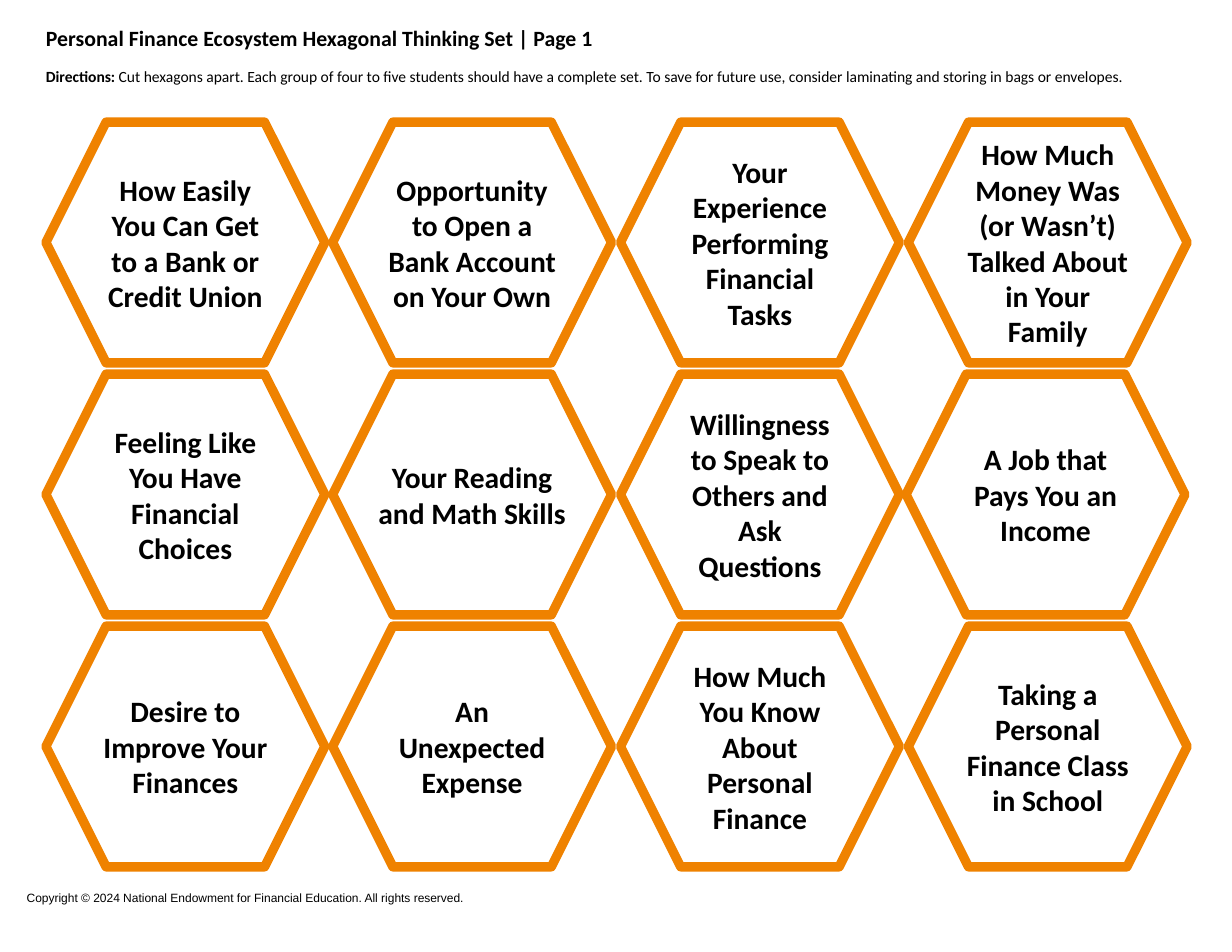
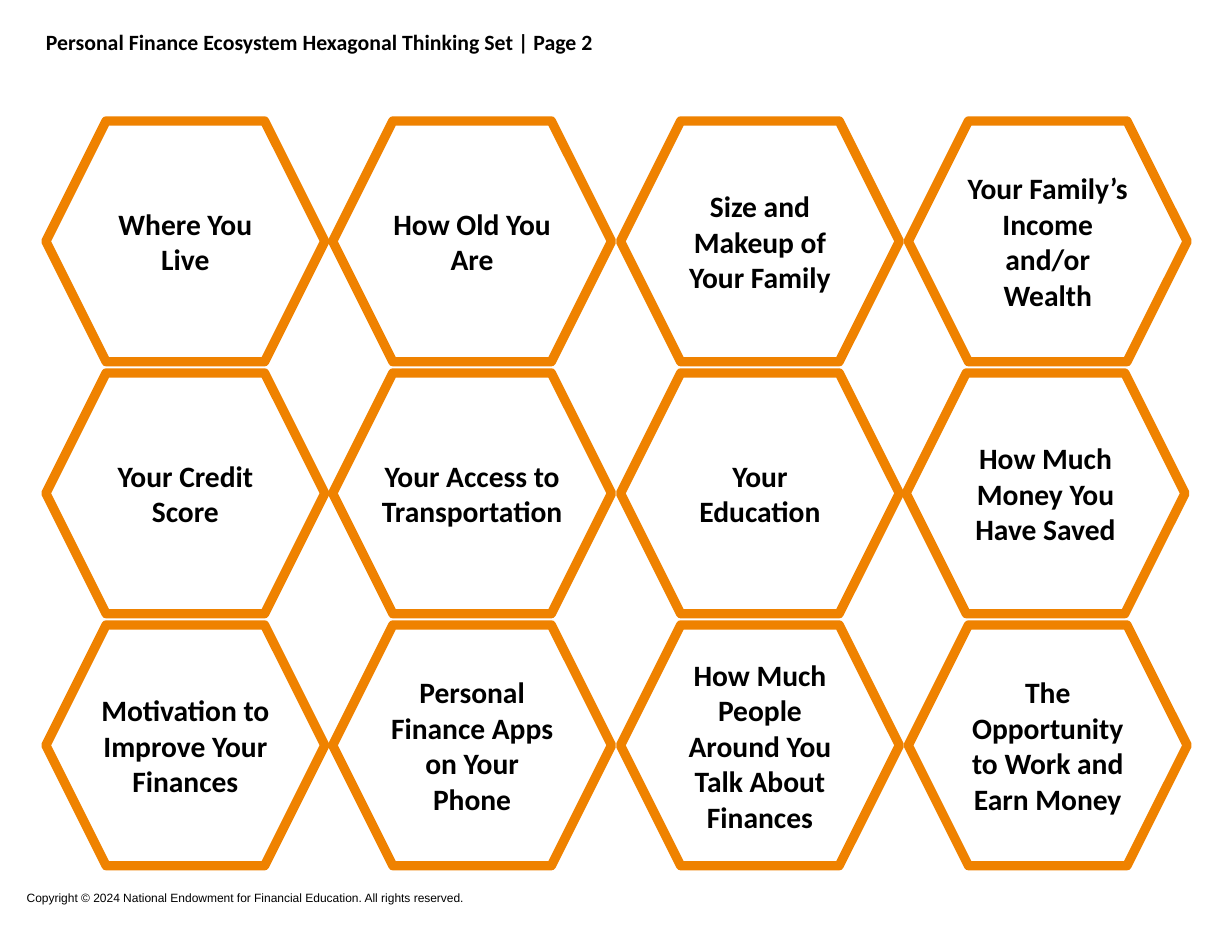
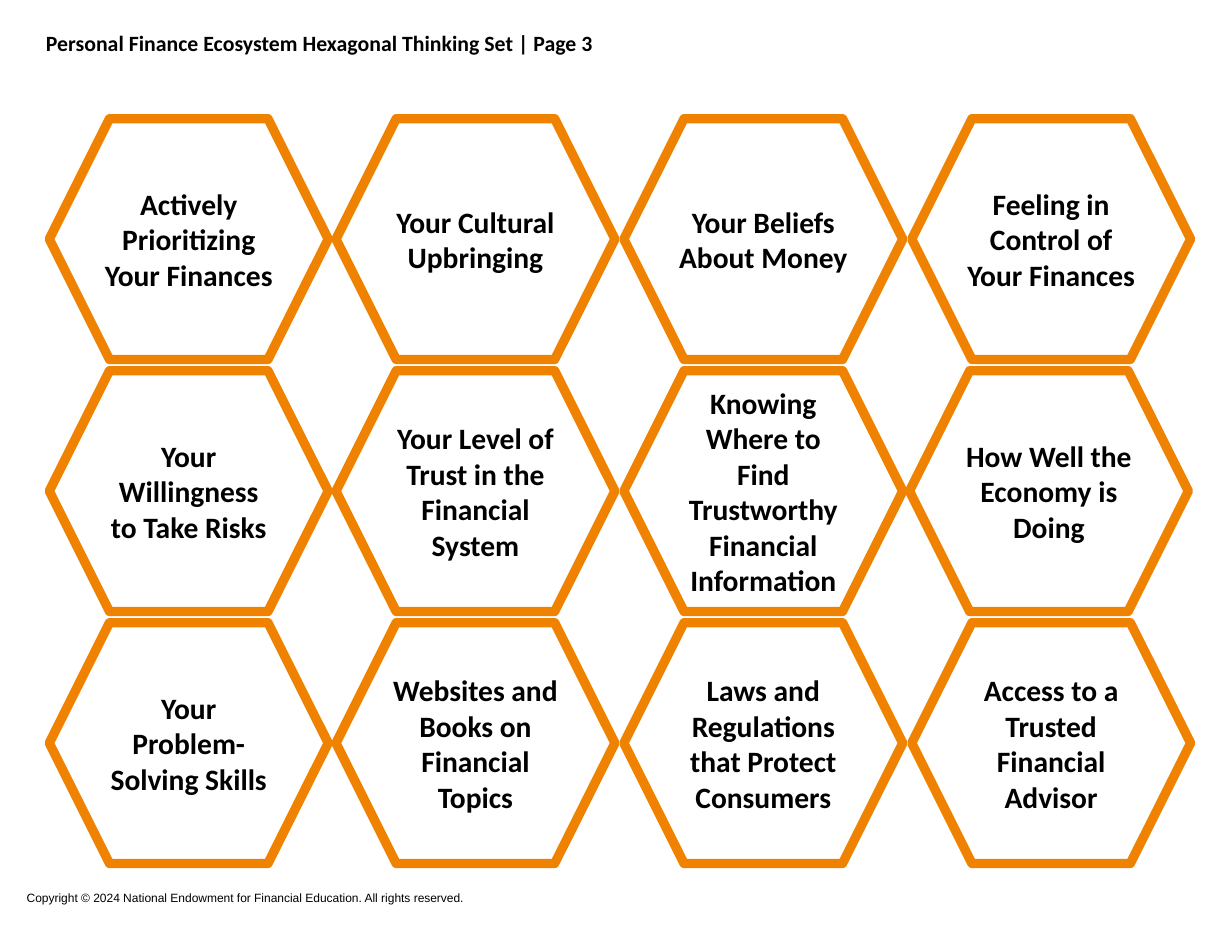
from pptx import Presentation
from pptx.dml.color import RGBColor
from pptx.enum.shapes import MSO_SHAPE
from pptx.enum.text import MSO_ANCHOR, MSO_AUTO_SIZE, PP_ALIGN
from pptx.util import Pt

HEX = MSO_SHAPE.HEXAGON
TOP, MID, LOW = MSO_ANCHOR.TOP, MSO_ANCHOR.MIDDLE, MSO_ANCHOR.BOTTOM
LEFT, MIDST = PP_ALIGN.LEFT, PP_ALIGN.CENTER
FIXED = MSO_AUTO_SIZE.NONE

PX = 9144
INK = {"text": "000000", "edge": "EF8200"}
HEAD = "Personal Finance Ecosystem Hexagonal Thinking Set | Page "
GUIDE = [
    ("Directions: ", True),
    ("Cut hexagons apart. Each group of four to five students should have "
     "a complete set. To save for future use, consider laminating and "
     "storing in bags or envelopes.", False),
]
RIGHTS = ("Copyright © 2024 National Endowment for Financial Education. "
          "All rights reserved.")

PAGES = [
    {"head": (31, 9, 1037, 96), "grid": (41, 109), "guide": GUIDE, "cards": [
        ["How Easily You Can Get to a Bank or Credit Union",
         "Opportunity to Open a Bank Account on Your Own",
         "Your Experience Performing Financial Tasks",
         "How Much Money Was (or Wasn’t) Talked About in Your Family"],
        ["Feeling Like You Have Financial Choices",
         "Your Reading and Math Skills",
         "Willingness to Speak to Others and Ask Questions",
         "A Job that Pays You an Income"],
        ["Desire to Improve Your Finances",
         "An Unexpected Expense",
         "How Much You Know About Personal Finance",
         "Taking a Personal Finance Class in School"]]},
    {"head": (31, 12, 865, 96), "grid": (41, 108), "guide": None, "cards": [
        ["Where You Live",
         "How Old You Are",
         "Size and Makeup of Your Family",
         "Your Family’s Income and/or Wealth"],
        ["Your Credit Score",
         "Your Access to Transportation",
         "Your Education",
         "How Much Money You Have Saved"],
        ["Motivation to Improve Your Finances",
         "Personal Finance Apps on Your Phone",
         "How Much People Around You Talk About Finances",
         "The Opportunity to Work and Earn Money"]]},
    {"head": (31, 13, 865, 96), "grid": (44, 106), "guide": None, "cards": [
        ["Actively Prioritizing Your Finances",
         "Your Cultural Upbringing",
         "Your Beliefs About Money",
         "Feeling in Control of Your Finances"],
        ["Your Willingness to Take Risks",
         "Your Level of Trust in the Financial System",
         "Knowing Where to Find Trustworthy Financial Information",
         "How Well the Economy is Doing"],
        ["Your Problem-\nSolving Skills",
         "Websites and Books on Financial Topics",
         "Laws and Regulations that Protect Consumers",
         "Access to a Trusted Financial Advisor"]]},
]


class Deck:
    """Holds the shared style and the slide being built."""

    def __init__(self):
        self.prs = Presentation()
        self.prs.slide_width = 1100 * PX
        self.prs.slide_height = 850 * PX
        self.slide = None

    def page(self):
        self.slide = self.prs.slides.add_slide(self.prs.slide_layouts[5])

    def frame(self, shape, anchor, pad_x=10, pad_y=10):
        frame = shape.text_frame
        look = {"word_wrap": True, "auto_size": FIXED,
                "vertical_anchor": anchor,
                "margin_left": pad_x * PX, "margin_right": pad_x * PX,
                "margin_top": pad_y * PX, "margin_bottom": pad_y * PX}
        for key, val in look.items():
            setattr(frame, key, val)
        return frame

    def words(self, para, runs, size, face="Calibri", **form):
        for key, val in form.items():
            setattr(para, key, val)
        for text, bold in runs:
            run = para.add_run()
            run.text = text
            look = {"name": face, "size": Pt(size), "bold": bold}
            for key, val in look.items():
                setattr(run.font, key, val)
            run.font.color.rgb = RGBColor.from_string(INK["text"])

    def head(self, box, text, guide):
        title = self.slide.shapes.title
        for key, val in zip(("left", "top", "width", "height"), box):
            setattr(title, key, val * PX)
        frame = self.frame(title, TOP)
        form = {"alignment": LEFT, "line_spacing": 1.15}
        self.words(frame.paragraphs[0], [(text, True)], 14, **form)
        if guide:
            self.words(frame.add_paragraph(), guide, 10,
                       space_before=Pt(8.4), **form)

    def card(self, left, top, text, pad):
        shape = self.slide.shapes.add_shape(
            HEX, left * PX, top * PX, 249 * PX, 215 * PX)
        shape.shadow.inherit = False
        shape.fill.background()
        shape.line.color.rgb = RGBColor.from_string(INK["edge"])
        shape.line.width = Pt(6)
        frame = self.frame(shape, MID, pad)
        for num, line in enumerate(text.split("\n")):
            para = frame.add_paragraph() if num else frame.paragraphs[0]
            self.words(para, [(line, True)], 19, alignment=MIDST)

    def grid(self, left, top, cards):
        for row, line in enumerate(cards):
            for col, text in enumerate(line):
                shift = 2 if (row, col) == (1, 3) else 0
                pad = 0 if (row, col) == (1, 1) else 10
                self.card(left + col * 770 // 3 - shift,
                          top + row * 225, text, pad)

    def foot(self):
        box = self.slide.shapes.add_textbox(
            14 * PX, 780 * PX, 474 * PX, 33 * PX)
        frame = self.frame(box, LOW, 10, 5)
        self.words(frame.paragraphs[0], [(RIGHTS, False)], 7.7, "Arial",
                   alignment=LEFT, line_spacing=0.9)


def main():
    deck = Deck()
    for num, page in enumerate(PAGES, 1):
        deck.page()
        deck.head(page["head"], f"{HEAD}{num}", page["guide"])
        deck.grid(*page["grid"], page["cards"])
        deck.foot()
    deck.prs.save("out.pptx")


if __name__ == "__main__":
    main()
